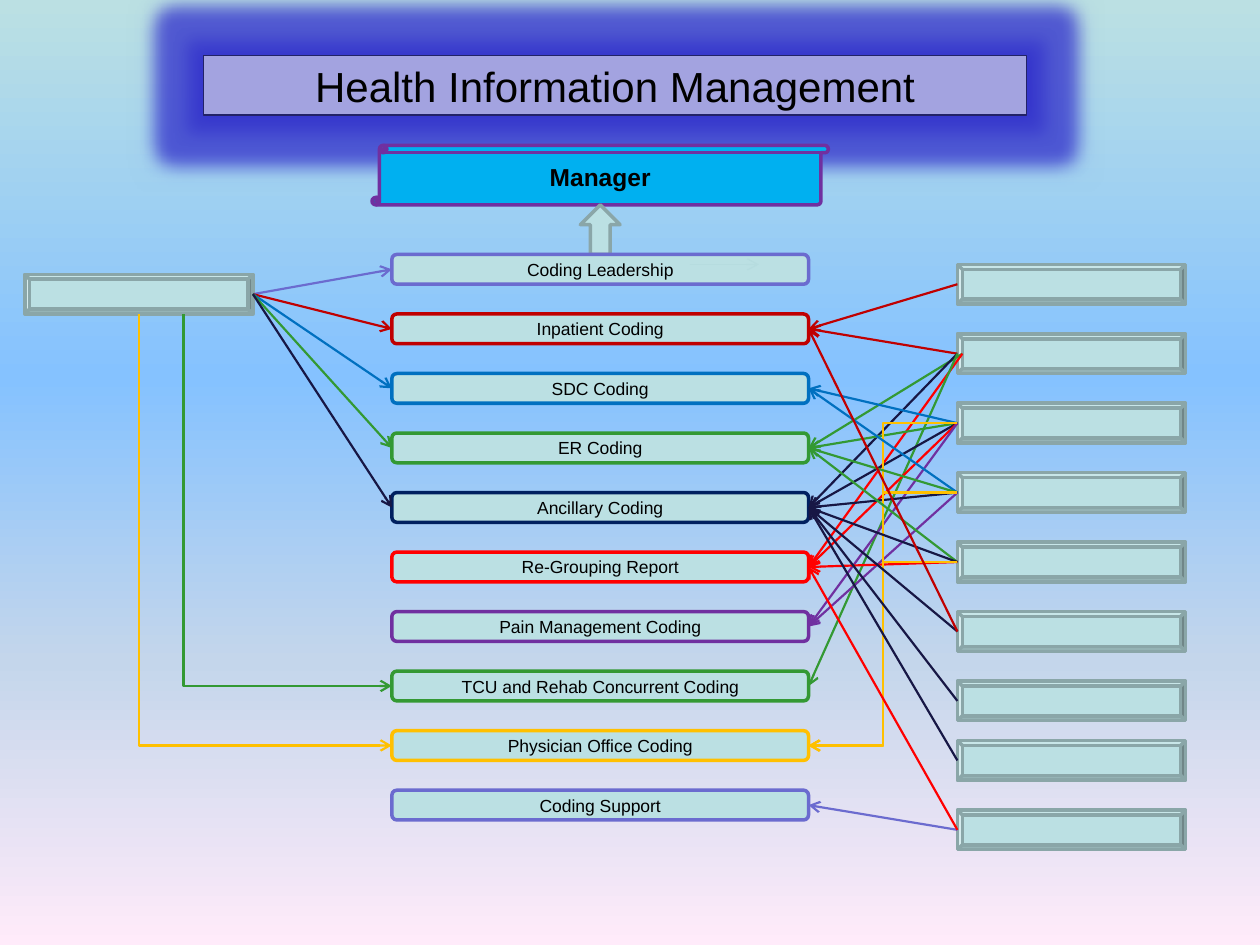
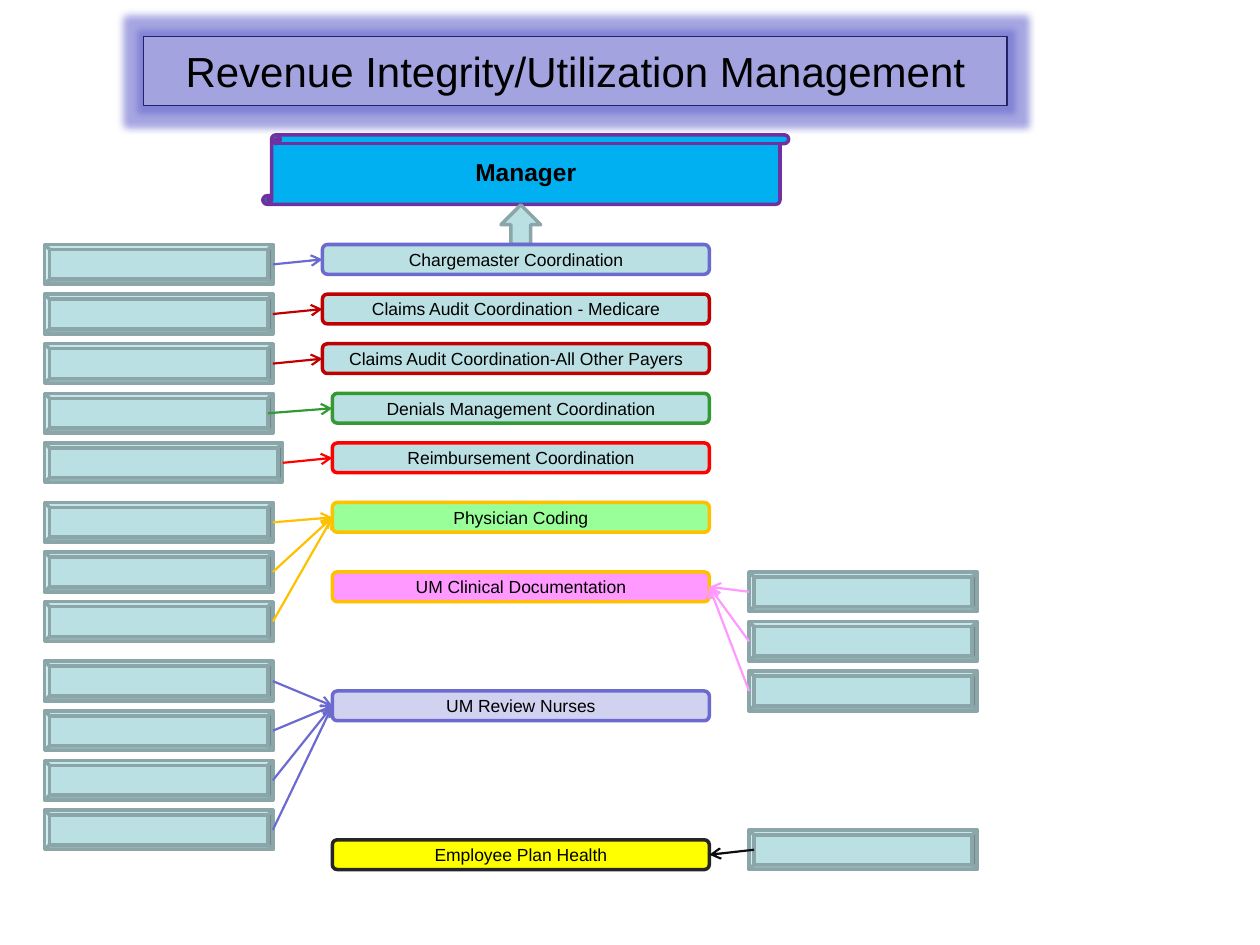
from pptx import Presentation
from pptx.dml.color import RGBColor
from pptx.enum.shapes import MSO_CONNECTOR, MSO_SHAPE
from pptx.enum.text import MSO_ANCHOR, PP_ALIGN
from pptx.oxml import parse_xml
from pptx.oxml.ns import nsdecls, qn
from pptx.util import Cm, Pt

RECT = MSO_SHAPE.RECTANGLE
SCROLL = MSO_SHAPE.VERTICAL_SCROLL
ROUND = MSO_SHAPE.FLOWCHART_ALTERNATE_PROCESS
BEVEL = MSO_SHAPE.BEVEL
ARROW = MSO_SHAPE.UP_ARROW
LINE = MSO_CONNECTOR.STRAIGHT
ELBOW = MSO_CONNECTOR.ELBOW
MIDDLE = MSO_ANCHOR.MIDDLE
CENTER = PP_ALIGN.CENTER

INK = {
    "black": "000000", "white": "FFFFFF", "pale": "BBE0E3", "edge": "8AA6A8",
    "faint": "B6DCDF", "title": "A3A3E0", "frame": "222267", "glow": "3333CC",
    "sky": "00B0F0", "violet": "7030A0", "iris": "6B6BCF", "wine": "C00000",
    "blue": "0070C0", "green": "339933", "navy": "002060", "night": "171745",
    "red": "FF0000", "gold": "FFC000", "mint": "99FF99", "pink": "FF99FF",
    "lilac": "D1D1F0", "yellow": "FFFF00", "coal": "262626", "jet": "0D0D0D",
}
SUNRISE = [(0, "BBE0E3"), (40, "85C2FF"), (70, "C4D6EB"), (100, "FFEBFA")]
TASK_H = 0.6
STAFF_W, STAFF_H = 4.6, 0.8

CODING = [
    ("Coding Leadership", "iris"),
    ("Inpatient Coding", "wine"),
    ("SDC Coding", "blue"),
    ("ER Coding", "green"),
    ("Ancillary Coding", "navy"),
    ("Re-Grouping Report", "red"),
    ("Pain Management Coding", "violet"),
    ("TCU and Rehab Concurrent Coding", "green"),
    ("Physician Office Coding", "gold"),
    ("Coding Support", "iris"),
]
OFFICE = 8
LEAD = range(5)
BENDS = [(3.7, 7), (2.8, OFFICE)]
CODERS = [
    (5.33, [1]),
    (6.73, [1, 3, 4, 5, 7]),
    (8.13, [2, 3, 4, 5, 6, OFFICE]),
    (9.53, [2, 3, 4, 6, OFFICE]),
    (10.93, [3, 4, 5, OFFICE]),
    (12.33, [4, 1]),
    (13.73, [4]),
    (14.93, [4]),
    (16.33, [9, 5]),
]
DENTS = [(1, 3), (1, 5)]

LEFT, RIGHT = 0.9, 15.1
REVENUE = [
    ("Chargemaster Coordination", 6.5, 4.93, "pale", "iris", "iris",
     LEFT, 4.93, 1),
    ("Claims Audit Coordination - Medicare", 6.5, 5.93, "pale", "wine", "wine",
     LEFT, 5.93, 1),
    ("Claims Audit Coordination-All Other Payers", 6.5, 6.93, "pale", "wine",
     "wine", LEFT, 6.93, 1),
    ("Denials Management Coordination", 6.7, 7.93, "pale", "green", "green",
     LEFT, 7.93, 1),
    ("Reimbursement Coordination", 6.7, 8.93, "pale", "red", "red",
     LEFT, 8.93, 1),
    ("Physician Coding", 6.7, 10.13, "mint", "gold", "gold", LEFT, 10.13, 3),
    ("UM Clinical Documentation", 6.7, 11.53, "pink", "gold", "pink",
     RIGHT, 11.53, 3),
    ("UM Review Nurses", 6.7, 13.93, "lilac", "iris", "iris", LEFT, 13.33, 4),
    ("Employee Plan Health", 6.7, 16.93, "yellow", "coal", "jet",
     RIGHT, 16.73, 1),
]
TASK_END = 14.3
WIDE = {"Reimbursement Coordination": 4.8}
INSET = {"Denials Management Coordination": -0.1, "Employee Plan Health": 0.1}


def rgb(name):
    return RGBColor.from_string(INK[name])


class Chart:
    def __init__(self):
        self.deck = Presentation()
        self.deck.slide_width = Cm(25.4)
        self.deck.slide_height = Cm(19.05)
        self.slide = None

    def page(self):
        self.slide = self.deck.slides.add_slide(self.deck.slide_layouts[6])
        fill = self.slide.background.fill
        fill.solid()
        fill.fore_color.rgb = rgb("white")

    def fade(self, stops):
        fill = self.slide.background.fill
        fill.gradient()
        fill.gradient_angle = 270
        old = self.slide.element.find(".//" + qn("a:gsLst"))
        marks = "".join(
            f'<a:gs pos="{pos * 1000}"><a:srgbClr val="{tone}"/></a:gs>'
            for pos, tone in stops)
        new = parse_xml(f'<a:gsLst {nsdecls("a")}>{marks}</a:gsLst>')
        old.getparent().replace(old, new)

    def shape(self, kind, box, fill, line, width=2, text="", size=10, bold=False):
        item = self.slide.shapes.add_shape(kind, *map(Cm, box))
        item.shadow.inherit = False
        item.fill.solid()
        item.fill.fore_color.rgb = rgb(fill)
        item.line.color.rgb = rgb(line)
        item.line.width = Pt(width)
        if text:
            frame = item.text_frame
            frame.margin_left = frame.margin_right = 0
            frame.margin_top = frame.margin_bottom = 0
            frame.word_wrap = True
            frame.vertical_anchor = MIDDLE
            para = frame.paragraphs[0]
            para.text = text
            para.alignment = CENTER
            para.font.name = "Arial"
            para.font.size = Pt(size)
            para.font.bold = bold
            para.font.color.rgb = rgb("black")
        return item

    def title(self, text, box, glow, tone, blur=0):
        item = self.shape(RECT, box, "title", "frame", 0.75, text, 24)
        shine = item.element.spPr.find(qn("a:effectLst"))
        shine.append(parse_xml(
            f'<a:glow {nsdecls("a")} rad="{Pt(glow)}"><a:srgbClr val="{INK[tone]}">'
            '<a:alpha val="60000"/></a:srgbClr></a:glow>'))
        if blur:
            shine.append(parse_xml(
                f'<a:outerShdw {nsdecls("a")} blurRad="{Pt(blur)}" dist="0">'
                f'<a:srgbClr val="{INK[tone]}"/></a:outerShdw>'))

    def head(self, box, rise):
        self.shape(SCROLL, box, "sky", "violet", text="Manager", size=14, bold=True)
        self.shape(ARROW, rise, "pale", "edge")

    def task(self, text, left, top, width, fill, line):
        self.shape(ROUND, (left, top, width, TASK_H), fill, line, text=text)

    def staff(self, left, top, width=STAFF_W):
        self.shape(BEVEL, (left, top, width, STAFF_H), "pale", "edge")

    def link(self, start, end, tone, kind=LINE, width=1.25, tip="tailEnd"):
        item = self.slide.shapes.add_connector(kind, *map(Cm, start + end))
        item.line.color.rgb = rgb(tone)
        item.line.width = Pt(width)
        item.line._get_or_add_ln().append(
            parse_xml(f'<a:{tip} {nsdecls("a")} type="arrow"/>'))
        item._element.spPr.append(parse_xml(f'<a:effectLst {nsdecls("a")}/>'))
        return item

    def corner(self, start, end, tone):
        item = self.link(end, start, tone, ELBOW, tip="headEnd")
        item._element.spPr.find(qn("a:prstGeom")).set("prst", "bentConnector2")


def health(art):
    art.page()
    art.fade(SUNRISE)
    art.title("Health Information Management", (4.1, 1.12, 16.6, 1.2), 18, "glow", 8)
    art.head((7.5, 2.93, 9.2, 1.2), (11.7, 4.13, 0.8, 1))

    left, width, top, step = 7.9, 8.4, 5.13, 1.2
    mids = [top + step * i + TASK_H / 2 for i in range(len(CODING))]
    tones = ["night" if tone == "navy" else tone for _, tone in CODING]
    for mid, (text, tone) in zip(mids, CODING):
        art.task(text, left, mid - TASK_H / 2, width, "pale", tone)
    art.link((13.9, 5.33), (15.3, 5.33), "faint", width=0.75)

    art.staff(0.5, 5.53)
    for i in LEAD:
        art.link((0.5 + STAFF_W, 5.93), (left, mids[i]), tones[i])
    for x, i in BENDS:
        art.corner((x, 6.33), (left, mids[i]), tones[i])

    side = 19.3
    for top, _ in CODERS:
        art.staff(side, top)
    for n, (top, jobs) in enumerate(CODERS):
        for i in jobs:
            x = side + (0.1 if (n, i) in DENTS else 0)
            kind = ELBOW if i == OFFICE else LINE
            art.link((x, top + STAFF_H / 2), (left + width, mids[i]), tones[i], kind)


def revenue(art):
    art.page()
    art.title("Revenue Integrity/Utilization Management",
              (2.9, 0.73, 17.4, 1.4), 8, "iris")
    art.head((5.3, 2.72, 10.6, 1.4), (10.1, 4.13, 0.8, 0.8))
    for text, left, top, fill, line, tone, side, first, count in REVENUE:
        art.task(text, left, top, TASK_END - left, fill, line)
        width = WIDE.get(text, STAFF_W)
        near, end = (side + width, left) if side == LEFT else (side, TASK_END)
        near += INSET.get(text, 0)
        for y in range(count):
            art.staff(side, first + y, width)
            art.link((near, first + y + STAFF_H / 2), (end, top + TASK_H / 2), tone)


def main():
    art = Chart()
    health(art)
    revenue(art)
    art.deck.save("out.pptx")


if __name__ == "__main__":
    main()
